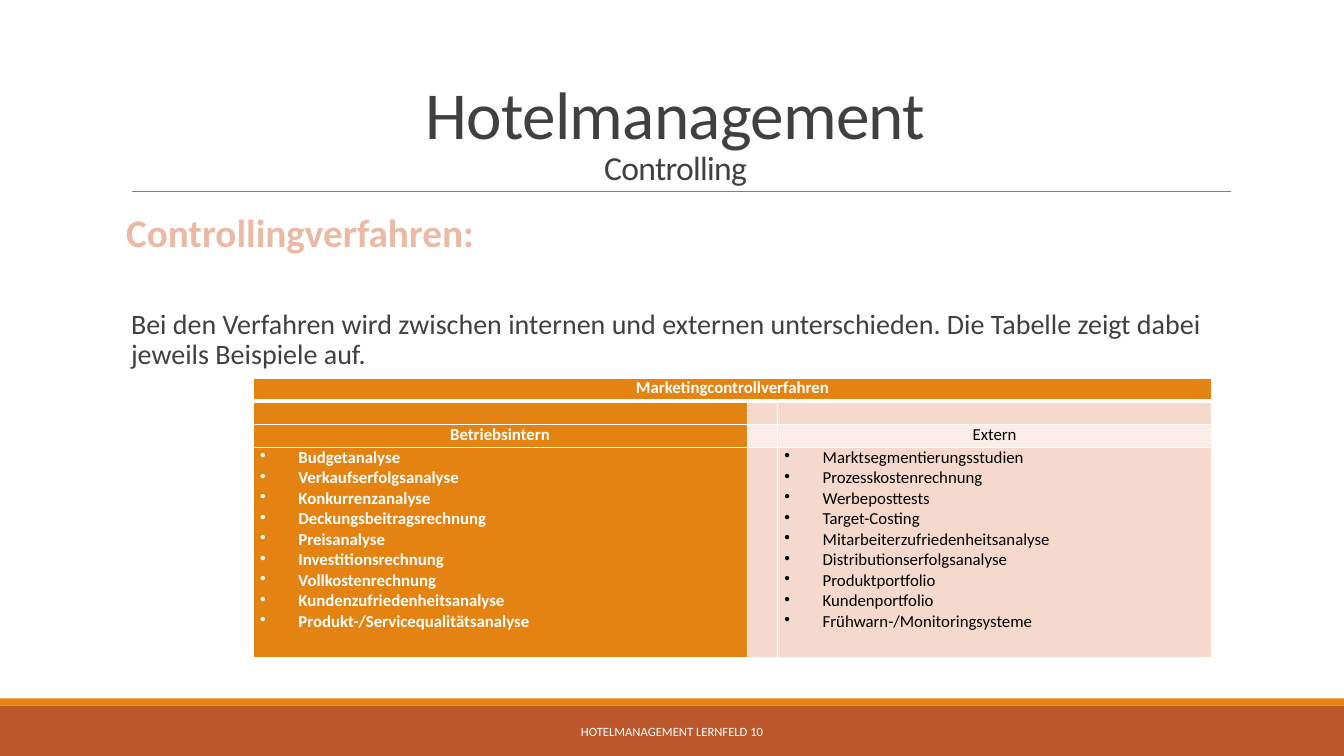
from dataclasses import dataclass

from lxml import etree
from pptx import Presentation
from pptx.dml.color import RGBColor
from pptx.enum import shapes, text
from pptx.oxml import ns
from pptx.util import Inches, Pt


@dataclass(frozen=True)
class Theme:
    font: str = "Calibri"
    ink: str = "404040"
    black: str = "000000"
    white: str = "FFFFFF"
    rule: str = "808080"
    rust: str = "BD582C"
    orange: str = "E48312"
    salmon: str = "EABAA5"
    blush: str = "F5D9CC"
    pale: str = "FAEDE7"
    title: int = 48
    subtitle: int = 24
    heading: int = 28
    body: int = 20
    cell: int = 12
    footer: int = 9


THEME = Theme()
TITLE = "Hotelmanagement"
SUBTITLE = "Controlling"
HEADING = "Controllingverfahren:"
INTRO = ("Bei den Verfahren wird zwischen internen und externen unterschieden. "
         "Die Tabelle zeigt dabei jeweils Beispiele auf.")
FOOTER = "HOTELMANAGEMENT LERNFELD 10"
INTERNAL = ["Budgetanalyse", "Verkaufserfolgsanalyse", "Konkurrenzanalyse",
            "Deckungsbeitragsrechnung", "Preisanalyse", "Investitionsrechnung",
            "Vollkostenrechnung", "Kundenzufriedenheitsanalyse",
            "Produkt-/Servicequalitätsanalyse"]
EXTERNAL = ["Marktsegmentierungsstudien", "Prozesskostenrechnung", "Werbeposttests",
            "Target-Costing", "Mitarbeiterzufriedenheitsanalyse",
            "Distributionserfolgsanalyse", "Produktportfolio", "Kundenportfolio",
            "Frühwarn-/Monitoringsysteme"]
ROWS = [
    [["Marketingcontrollverfahren"], [], []],
    [[], [], []],
    [["Betriebsintern"], [], ["Extern"]],
    [INTERNAL, [], EXTERNAL],
]
ROW_FILLS = [THEME.orange, THEME.blush, THEME.pale, THEME.blush]
COLUMN_WIDTHS = [4.9, 0.3, 4.31]
ROW_HEIGHTS = [0.23, 0.23, 0.23, 2.08]
BANDS = [(7, 0.5, THEME.rust), (6.93, 0.07, THEME.orange)]


def style(font, size, color, bold=False):
    font.name = THEME.font
    font.size = Pt(size)
    font.bold = bold
    font.color.rgb = RGBColor.from_string(color)


def add_band(slide, top, height, color):
    band = slide.shapes.add_shape(shapes.MSO_SHAPE.RECTANGLE, 0, Inches(top),
                                  Inches(13.33), Inches(height))
    band.shadow.inherit = False
    band.fill.solid()
    band.fill.fore_color.rgb = RGBColor.from_string(color)
    band.line.fill.background()


def add_rule(slide):
    rule = slide.shapes.add_connector(shapes.MSO_CONNECTOR.STRAIGHT, Inches(1.31),
                                      Inches(1.9), Inches(12.21), Inches(1.9))
    rule.line.color.rgb = RGBColor.from_string(THEME.rule)
    rule.line.width = Pt(0.5)
    etree.SubElement(rule._element.spPr, ns.qn("a:effectLst"))


def place_title(slide):
    title = slide.shapes.title
    title.left, title.top, title.width, title.height = map(Inches, (1.2, 0.32, 11, 1.59))
    frame = title.text_frame
    frame.auto_size = text.MSO_AUTO_SIZE.NONE
    frame.vertical_anchor = text.MSO_ANCHOR.BOTTOM
    paragraph = frame.paragraphs[0]
    paragraph.alignment = text.PP_ALIGN.CENTER
    paragraph.line_spacing = 0.85
    for words, size in ((TITLE, THEME.title), (SUBTITLE, THEME.subtitle)):
        if paragraph.runs:
            paragraph.add_line_break()
        run = paragraph.add_run()
        run.text = words
        style(run.font, size, THEME.ink)
        run.font._element.set("spc", "-50")


def add_text(slide, words, box, size, color, bold=False, wrap=True):
    shape = slide.shapes.add_textbox(*map(Inches, box))
    shape.text_frame.word_wrap = wrap
    paragraph = shape.text_frame.paragraphs[0]
    paragraph.text = words
    paragraph.alignment = text.PP_ALIGN.CENTER
    style(paragraph.font, size, color, bold)
    return shape.text_frame


def add_bullet(paragraph):
    properties = paragraph._p.get_or_add_pPr()
    properties.set("marL", str(Inches(0.38)))
    properties.set("indent", str(-Inches(0.38)))
    bullet = etree.Element(ns.qn("a:buChar"), char="•")
    properties.insert(0, bullet)


def add_borders(cell, bottom_width):
    properties = cell._tc.get_or_add_tcPr()
    widths = {"lnL": 1, "lnR": 1, "lnT": 1, "lnB": bottom_width}
    for position, (side, width) in enumerate(widths.items()):
        line = etree.Element(ns.qn(f"a:{side}"), w=str(Pt(width)))
        fill = etree.SubElement(line, ns.qn("a:solidFill"))
        etree.SubElement(fill, ns.qn("a:srgbClr"), val=THEME.white)
        properties.insert(position, line)


def fill_cell(cell, lines, fill, strong, bottom_width):
    cell.margin_left = cell.margin_right = Inches(0.07)
    cell.margin_top = cell.margin_bottom = 0
    cell.fill.solid()
    cell.fill.fore_color.rgb = RGBColor.from_string(fill)
    add_borders(cell, bottom_width)
    cell.text = "\n".join(lines)
    for paragraph in cell.text_frame.paragraphs:
        style(paragraph.font, THEME.cell, THEME.white if strong else THEME.black, strong)
        if len(lines) > 1:
            add_bullet(paragraph)
        else:
            paragraph.alignment = text.PP_ALIGN.CENTER


def add_methods_table(slide):
    table = slide.shapes.add_table(
        len(ROWS), len(COLUMN_WIDTHS), Inches(2.51), Inches(3.75),
        Inches(sum(COLUMN_WIDTHS)), Inches(sum(ROW_HEIGHTS))).table
    table.first_row = table.horz_banding = False
    for column, width in zip(table.columns, COLUMN_WIDTHS):
        column.width = Inches(width)
    for row, height in zip(table.rows, ROW_HEIGHTS):
        row.height = Inches(height)
    for r, cells in enumerate(ROWS):
        for c, lines in enumerate(cells):
            strong = r == 0 or c == 0
            fill_cell(table.cell(r, c), lines, THEME.orange if strong else ROW_FILLS[r],
                      strong, 3 if r == 0 else 1)
    table.cell(0, 0).merge(table.cell(0, len(COLUMN_WIDTHS) - 1))


def main():
    presentation = Presentation()
    presentation.slide_width = Inches(13.33)
    presentation.slide_height = Inches(7.5)
    slide = presentation.slides.add_slide(presentation.slide_layouts[5])
    for band in BANDS:
        add_band(slide, *band)
    add_rule(slide)
    place_title(slide)
    intro = add_text(slide, INTRO, (1.3, 3.03, 10.9, 0.72), THEME.body, THEME.ink)
    intro.margin_left = intro.margin_right = 0
    intro.paragraphs[0].alignment = text.PP_ALIGN.LEFT
    intro.paragraphs[0].line_spacing = 0.9
    footer = add_text(slide, FOOTER, (4.03, 7.06, 5.27, 0.4), THEME.footer, THEME.white)
    footer.vertical_anchor = text.MSO_ANCHOR.MIDDLE
    add_text(slide, HEADING, (1.13, 2.02, 3.69, 0.57), THEME.heading, THEME.salmon,
             bold=True, wrap=False)
    add_methods_table(slide)
    presentation.save("out.pptx")


if __name__ == "__main__":
    main()
